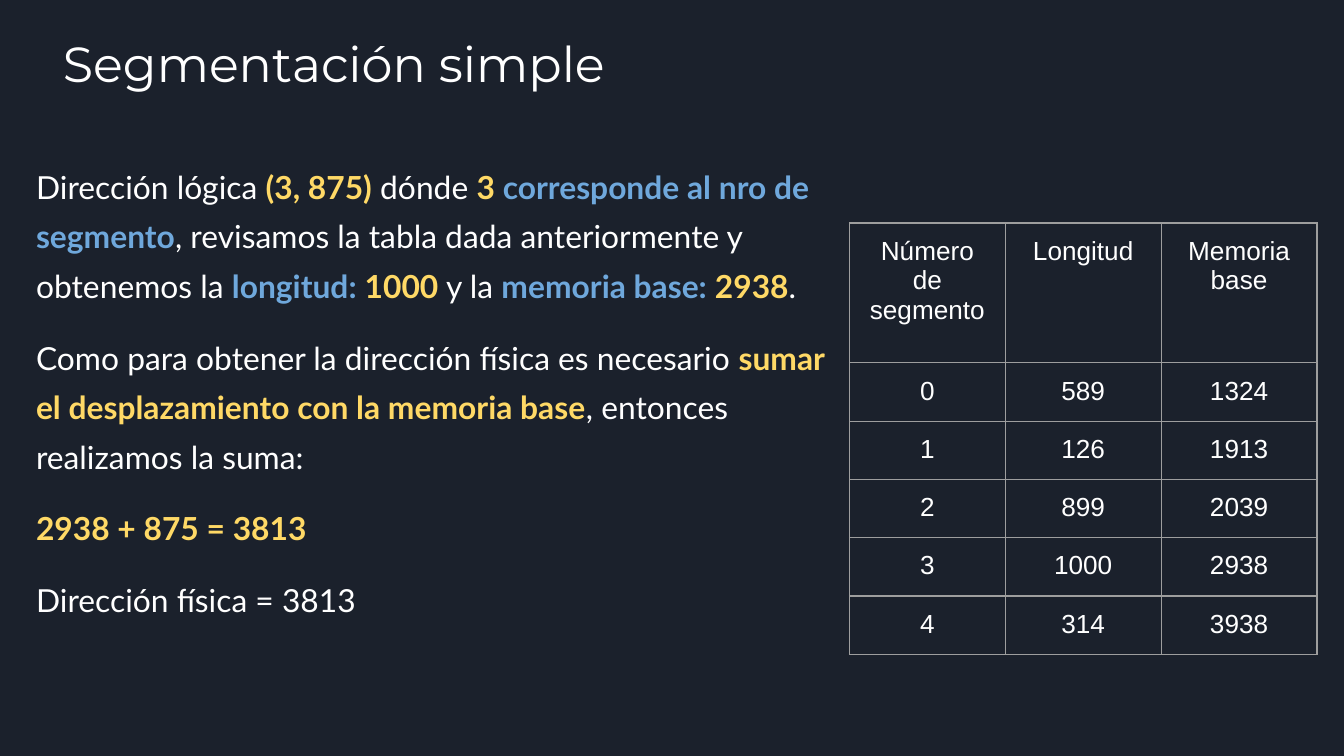
from lxml import etree
from pptx import Presentation
from pptx.dml.color import RGBColor
from pptx.enum.text import MSO_ANCHOR, PP_ALIGN
from pptx.oxml.ns import qn
from pptx.util import Inches, Pt

COLORS = {
    "background": "1B212C",
    "text": "FFFFFF",
    "value": "FFD966",
    "term": "6FA8DC",
    "border": "9E9E9E",
}
MARGIN = Inches(0.1)

# Each paragraph is a list of (text, color name); highlighted colors are bold
EXPLANATION = [
    [
        ("Dirección lógica ", "text"),
        ("(3, 875)", "value"),
        (" dónde ", "text"),
        ("3", "value"),
        (" corresponde al nro de segmento", "term"),
        (", revisamos la tabla dada anteriormente y obtenemos la ", "text"),
        ("longitud: ", "term"),
        ("1000 ", "value"),
        ("y la ", "text"),
        ("memoria base: ", "term"),
        ("2938", "value"),
        (".", "text"),
    ],
    [
        ("Como para obtener la dirección física es necesario ", "text"),
        ("sumar el desplazamiento con la memoria base", "value"),
        (", entonces realizamos la suma:", "text"),
    ],
    [("2938 + 875 = 3813", "value")],
    [("Dirección física = 3813", "text")],
]

SEGMENTS = [
    ("Número de segmento", "Longitud", "Memoria base"),
    (0, 589, 1324),
    (1, 126, 1913),
    (2, 899, 2039),
    (3, 1000, 2938),
    (4, 314, 3938),
]


def style_run(run, font_name, size, color="text", bold=False):
    run.font.name = font_name
    run.font.size = Pt(size)
    run.font.bold = bold
    run.font.color.rgb = RGBColor.from_string(COLORS[color])


def set_margins(target):
    target.margin_left = target.margin_right = MARGIN
    target.margin_top = target.margin_bottom = MARGIN


def add_text_frame(slide, box):
    text_frame = slide.shapes.add_textbox(*map(Inches, box)).text_frame
    text_frame.word_wrap = True
    text_frame.vertical_anchor = MSO_ANCHOR.TOP
    set_margins(text_frame)
    return text_frame


def add_title(slide, box, title):
    text_frame = add_text_frame(slide, box)
    text_frame.text = title
    style_run(text_frame.paragraphs[0].runs[0], "Montserrat", 26.4)


def add_explanation(slide, box, paragraphs):
    text_frame = add_text_frame(slide, box)
    for index, parts in enumerate(paragraphs):
        paragraph = text_frame.add_paragraph() if index else text_frame.paragraphs[0]
        paragraph.line_spacing = 1.3
        paragraph.space_before = Pt(12 if index else 0)
        for text, color in parts:
            run = paragraph.add_run()
            run.text = text
            style_run(run, "Lato", 17, color, bold=color != "text")


def set_borders(cell, color, width):
    properties = cell._tc.get_or_add_tcPr()
    # Border lines must come before the cell's fill
    for position, side in enumerate(("lnL", "lnR", "lnT", "lnB")):
        line = etree.Element(qn(f"a:{side}"), w=str(Pt(width)))
        fill = etree.SubElement(line, qn("a:solidFill"))
        etree.SubElement(fill, qn("a:srgbClr"), val=color)
        properties.insert(position, line)


def add_segment_table(slide, box, rows, header_height):
    left, top, width, height = box
    column_count = len(rows[0])
    row_height = (height - header_height) / (len(rows) - 1)
    table = slide.shapes.add_table(
        len(rows), column_count, *map(Inches, box)
    ).table
    table.first_row = table.horz_banding = False
    for column in table.columns:
        column.width = Inches(width / column_count)
    for row_index, values in enumerate(rows):
        table.rows[row_index].height = Inches(row_height if row_index else header_height)
        for column_index, value in enumerate(values):
            cell = table.cell(row_index, column_index)
            cell.text_frame.text = str(value)
            cell.fill.background()
            set_margins(cell)
            set_borders(cell, COLORS["border"], 0.75)
            paragraph = cell.text_frame.paragraphs[0]
            paragraph.alignment = PP_ALIGN.CENTER
            style_run(paragraph.runs[0], "Arial", 14)


def main():
    presentation = Presentation()
    # Widescreen, 16:9
    presentation.slide_width = Inches(10)
    presentation.slide_height = presentation.slide_width * 9 // 16
    slide = presentation.slides.add_slide(presentation.slide_layouts[6])
    background = slide.background.fill
    background.solid()
    background.fore_color.rgb = RGBColor.from_string(COLORS["background"])

    add_title(slide, (0.37, 0.15, 4.51, 0.61), "Segmentación simple")
    add_explanation(slide, (0.17, 1.06, 6.16, 4.41), EXPLANATION)
    add_segment_table(slide, (6.32, 1.66, 3.48, 3.09), SEGMENTS, header_height=1.04)
    presentation.save("out.pptx")


if __name__ == "__main__":
    main()
